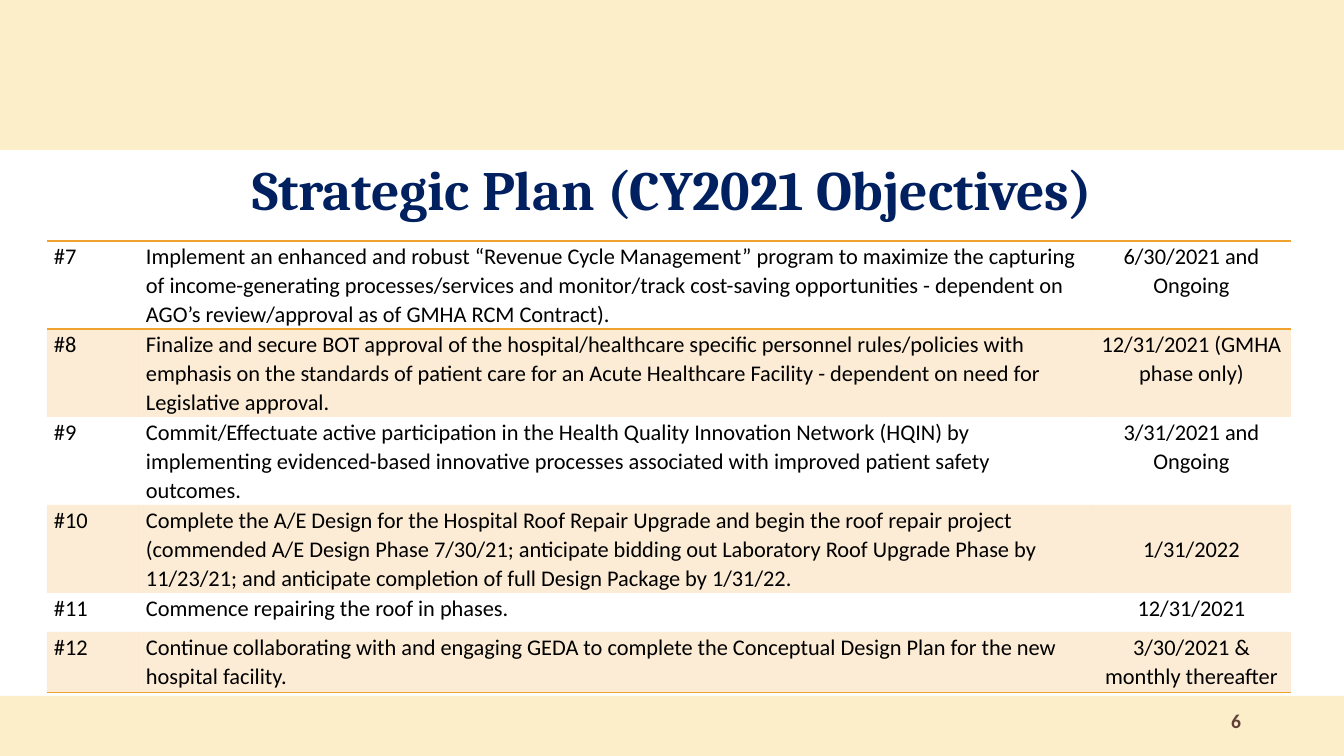
from lxml.etree import SubElement
from pptx import Presentation
from pptx.dml.color import RGBColor
from pptx.enum.shapes import MSO_SHAPE as Shape
from pptx.enum.text import MSO_ANCHOR as Anchor, PP_ALIGN as Align
from pptx.oxml import parse_xml
from pptx.oxml.ns import nsdecls, qn
from pptx.util import Pt

EMU_PER_PX = 914400 / 100.8

CREAM = RGBColor(0xFB, 0xEE, 0xC9)
NAVY = RGBColor(0x00, 0x20, 0x60)
BLACK = RGBColor(0x00, 0x00, 0x00)
BROWN = RGBColor(0x62, 0x41, 0x39)
ORANGE = RGBColor(0xF0, 0xA2, 0x2E)

NO_STYLE = "{2D5ABB26-0587-4C30-8999-92F81FD0307C}"
COLUMN_WIDTHS = [92, 953, 199]
ROW_HEIGHTS = [88, 88, 88, 88, 39, 61]
FIRST_NUMBER = 7
OBJECTIVES = [
    ("Implement an enhanced and robust “Revenue Cycle Management” program to maximize "
     "the capturing of income-generating processes/services and monitor/track cost-saving "
     "opportunities - dependent on AGO’s review/approval as of GMHA RCM Contract).",
     "6/30/2021 and Ongoing"),
    ("Finalize and secure BOT approval of the hospital/healthcare specific personnel "
     "rules/policies with emphasis on the standards of patient care for an Acute Healthcare "
     "Facility - dependent on need for Legislative approval.",
     "12/31/2021 (GMHA phase only)"),
    ("Commit/Effectuate active participation in the Health Quality Innovation Network (HQIN) "
     "by implementing evidenced-based innovative processes associated with improved patient "
     "safety outcomes.",
     "3/31/2021 and Ongoing"),
    ("Complete the A/E Design for the Hospital Roof Repair Upgrade and begin the roof repair "
     "project (commended A/E Design Phase 7/30/21; anticipate bidding out Laboratory Roof "
     "Upgrade Phase by 11/23/21; and anticipate completion of full Design Package by 1/31/22.",
     "1/31/2022"),
    ("Commence repairing the roof in phases.", "12/31/2021"),
    ("Continue collaborating with and engaging GEDA to complete the Conceptual Design Plan "
     "for the new hospital facility.",
     "3/30/2021 & monthly thereafter"),
]


def px(value):
    return round(value * EMU_PER_PX)


def add_text(paragraph, text, font, size, color, bold=False, align=Align.LEFT):
    paragraph.alignment = align
    run = paragraph.add_run()
    run.text = text
    run.font.name = font
    run.font.size = Pt(size)
    run.font.bold = bold
    run.font.color.rgb = color


def add_band(slide, top, height):
    band = slide.shapes.add_shape(Shape.RECTANGLE, 0, px(top), px(1344), px(height))
    band.shadow.inherit = False
    band.fill.solid()
    band.fill.fore_color.rgb = CREAM
    band.line.fill.background()


def set_title(slide, text):
    title = slide.shapes.title
    title.left, title.top, title.width, title.height = px(242), px(159), px(914), px(59)
    title.text_frame.vertical_anchor = Anchor.MIDDLE
    add_text(title.text_frame.paragraphs[0], text, "Cambria", 39.6, NAVY, bold=True)


def shade(cell):
    cell.fill.solid()
    cell.fill.fore_color.rgb = ORANGE
    color = cell.fill._xPr.find(f"{qn('a:solidFill')}/{qn('a:srgbClr')}")
    SubElement(color, qn("a:alpha"), val="20000")


def add_borders(cell, sides):
    properties = cell._tc.get_or_add_tcPr()
    for index, side in enumerate(sides):
        properties.insert(index, parse_xml(
            f'<a:ln{side} {nsdecls("a")} w="12700"><a:solidFill>'
            f'<a:srgbClr val="{ORANGE}"/></a:solidFill></a:ln{side}>'))


def fill_cell(cell, text, align, shaded, borders):
    cell.margin_left = cell.margin_right = px(7)
    cell.margin_top = cell.margin_bottom = 0
    cell.vertical_anchor = Anchor.TOP
    paragraph = cell.text_frame.paragraphs[0]
    paragraph.line_spacing = 1.07
    add_text(paragraph, text, "Calibri", 16, BLACK, align=align)
    if shaded:
        shade(cell)
    else:
        cell.fill.background()
    add_borders(cell, borders)


def add_objectives(slide):
    frame = slide.shapes.add_table(len(OBJECTIVES), len(COLUMN_WIDTHS), px(47), px(241),
                                   px(sum(COLUMN_WIDTHS)), px(sum(ROW_HEIGHTS)))
    table = frame.table
    table.first_row = table.horz_banding = False
    table._tbl.tblPr.find(qn("a:tableStyleId")).text = NO_STYLE
    for column, width in zip(table.columns, COLUMN_WIDTHS):
        column.width = px(width)

    borders = {0: "TB", len(OBJECTIVES) - 1: "B"}
    aligns = [Align.LEFT, Align.LEFT, Align.CENTER]
    for index, (objective, due) in enumerate(OBJECTIVES):
        table.rows[index].height = px(ROW_HEIGHTS[index])
        texts = [f"#{FIRST_NUMBER + index}", objective, due]
        for column, (text, align) in enumerate(zip(texts, aligns)):
            fill_cell(table.cell(index, column), text, align,
                      index % 2 == 1, borders.get(index, ""))

    # The date of the roof design sits halfway down its row
    table.cell(3, 2).vertical_anchor = Anchor.MIDDLE


def add_page_number(slide, number):
    box = slide.shapes.add_textbox(px(890), px(701), px(361), px(40))
    box.text_frame.word_wrap = True
    box.text_frame.vertical_anchor = Anchor.MIDDLE
    add_text(box.text_frame.paragraphs[0], number, "Calibri", 14, BROWN,
             bold=True, align=Align.RIGHT)


def main():
    presentation = Presentation()
    presentation.slide_width, presentation.slide_height = px(1344), px(756)
    slide = presentation.slides.add_slide(presentation.slide_layouts[5])

    # Cream bands at the bottom and top
    add_band(slide, 696, 60)
    add_band(slide, 0, 150)

    # Content
    set_title(slide, "Strategic Plan (CY2021 Objectives)")
    add_objectives(slide)
    add_page_number(slide, "6")

    presentation.save("out.pptx")


if __name__ == "__main__":
    main()
